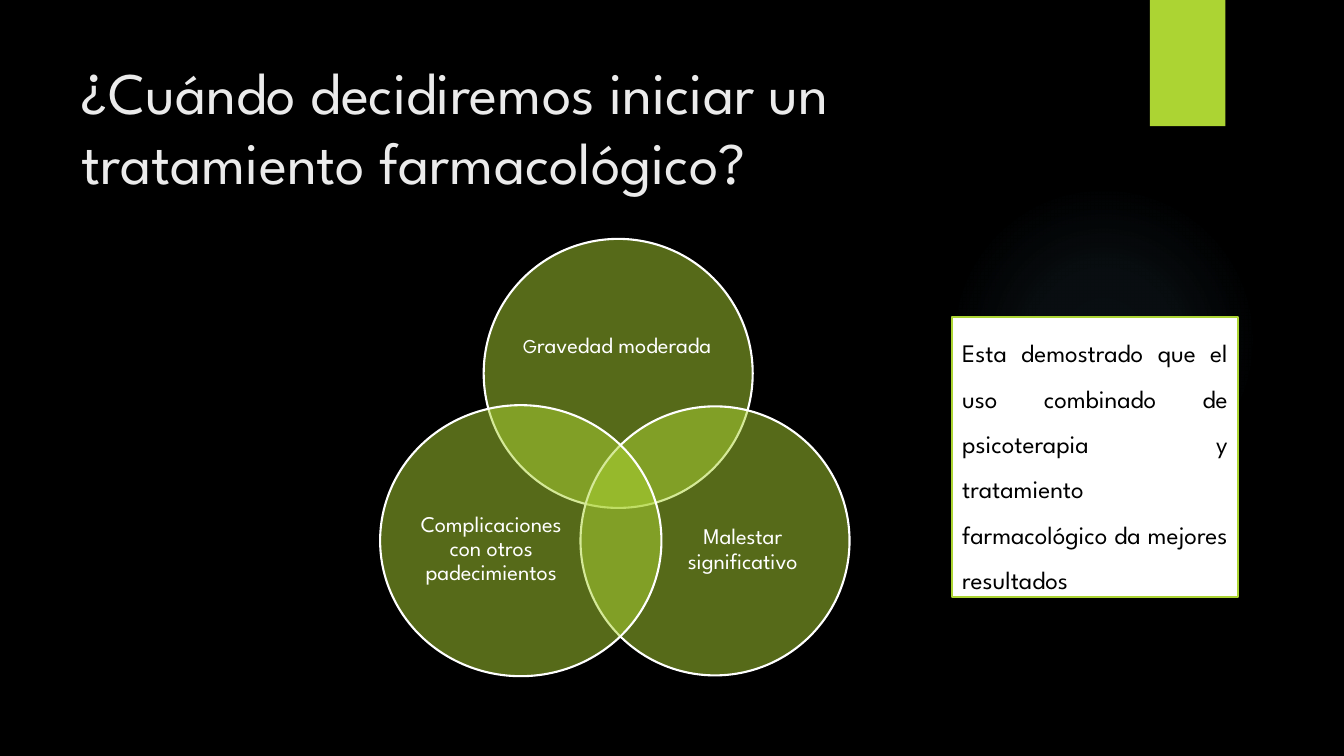
"""Build the slide on when to start pharmacological treatment."""
from lxml import etree
from pptx import Presentation
from pptx.dml.color import RGBColor
from pptx.enum.shapes import MSO_SHAPE as SHAPE
from pptx.enum.text import MSO_ANCHOR as ANCHOR, MSO_AUTO_SIZE as FIT, PP_ALIGN as ALIGN
from pptx.oxml import parse_xml
from pptx.oxml.ns import qn
from pptx.util import Cm, Pt

FONT = "League Spartan"
LIME, WHITE, BLACK = "ACD433", "FFFFFF", "000000"
NS = "http://schemas.openxmlformats.org/drawingml/2006/main"
VENN = [
    ((12.19, 6.02, 6.78, 6.78), (13.08, 7.19, 4.95, 3.05),
     [("G", 14), ("ravedad moderada", 16)]),
    ((14.63, 10.24, 6.78, 6.78), (16.69, 11.99, 4.06, 3.73),
     [("Malestar significativo", 16)]),
    ((9.58, 10.21, 7.09, 6.83), (10.26, 11.96, 4.24, 3.76),
     [("Complicaciones con otros padecimientos", 16)]),
]


def paint(color_format, color):
    color_format.rgb = RGBColor.from_string(color)


def add_figure(shapes, kind, box, fill, line=None):
    sp = shapes.add_shape(kind, *map(Cm, box))
    sp.shadow.inherit = False
    sp.fill.solid()
    paint(sp.fill.fore_color, fill)
    if line:
        paint(sp.line.color, line)
        sp.line.width = Pt(1.5)
    else:
        sp.line.fill.background()
    return sp


def set_alpha(sp, percent):
    color = sp.fill._xPr.find(qn("a:solidFill"))[0]
    etree.SubElement(color, qn("a:alpha"), val=str(percent * 1000))


def add_glow(shapes, box, color, stops):
    sp = add_figure(shapes, SHAPE.OVAL, box, color)
    gs = "".join(
        f'<a:gs pos="{pos * 1000}"><a:srgbClr val="{color}">'
        f'<a:alpha val="{alpha * 1000}"/></a:srgbClr></a:gs>' for pos, alpha in stops)
    solid = sp.fill._xPr.find(qn("a:solidFill"))
    solid.getparent().replace(solid, parse_xml(
        f'<a:gradFill xmlns:a="{NS}" rotWithShape="1"><a:gsLst>{gs}</a:gsLst>'
        '<a:path path="circle"><a:fillToRect l="50000" t="50000" r="50000" b="50000"/>'
        '</a:path></a:gradFill>'))


def write(tf, runs, color, align, spacing=1.0, anchor=ANCHOR.TOP, fit=FIT.NONE):
    tf.word_wrap = True
    tf.auto_size = fit
    tf.vertical_anchor = anchor
    p = tf.paragraphs[0]
    p.alignment = align
    p.line_spacing = spacing
    for text, size in runs:
        r = p.add_run()
        r.text = text
        r.font.name = FONT
        r.font.size = Pt(size)
        paint(r.font.color, color)


def add_title(s, box, text):
    sp = s.shapes.title
    sp.left, sp.top, sp.width, sp.height = map(Cm, box)
    s.shapes._spTree.append(sp._element)
    write(sp.text_frame, [(text, 42)], "EBEBEB", ALIGN.LEFT)


def add_label(shapes, box, runs):
    tf = shapes.add_textbox(*map(Cm, box)).text_frame
    tf.margin_left = tf.margin_right = tf.margin_top = tf.margin_bottom = 0
    write(tf, runs, WHITE, ALIGN.CENTER, 0.9, ANCHOR.MIDDLE)


def add_venn(s):
    group = s.shapes.add_group_shape()
    for circle, label, runs in VENN:
        set_alpha(add_figure(group.shapes, SHAPE.OVAL, circle, LIME, WHITE), 50)
        add_label(group.shapes, label, runs)


def main():
    prs = Presentation()
    prs.slide_width, prs.slide_height = Cm(33.87), Cm(19.05)
    s = prs.slides.add_slide(prs.slide_layouts[5])
    s.background.fill.solid()
    paint(s.background.fill.fore_color, BLACK)
    add_glow(s.shapes, (23.9, 4.65, 7.82, 7.82), "7AC4F0", [(0, 7), (36, 6), (69, 0)])
    add_figure(s.shapes, SHAPE.RECTANGLE, (28.98, 0, 1.9, 3.18), LIME)
    add_title(s, (1.8, 1.27, 26.14, 3.89),
              "¿Cuándo decidiremos iniciar un tratamiento farmacológico?")
    add_venn(s)
    note = add_figure(s.shapes, SHAPE.RECTANGLE, (24, 8, 7.19, 7.04), WHITE, LIME)
    write(note.text_frame,
          [("Esta demostrado que el uso combinado de psicoterapia y tratamiento "
            "farmacológico da mejores resultados", 18)],
          BLACK, ALIGN.JUSTIFY, 1.5, fit=FIT.SHAPE_TO_FIT_TEXT)
    prs.save("out.pptx")


if __name__ == "__main__":
    main()
